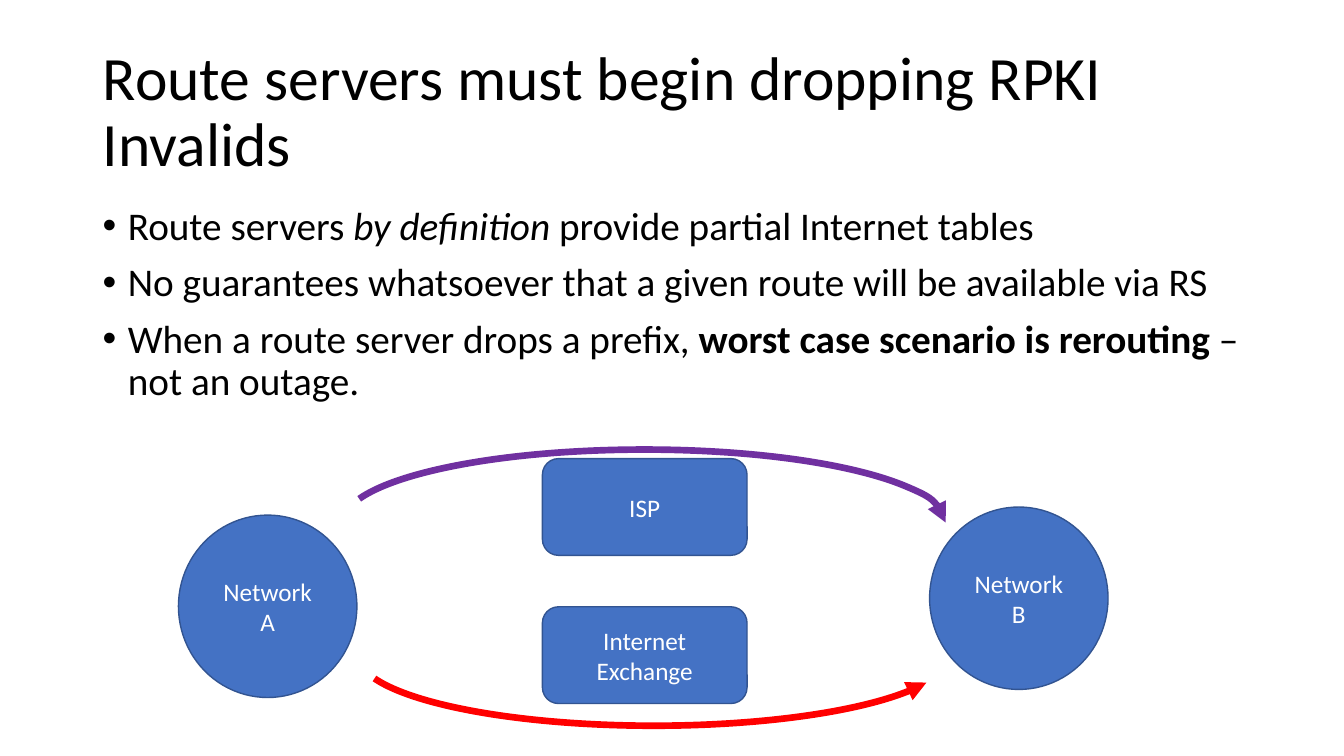
from lxml import etree
from pptx import Presentation, util as u
from pptx.dml.color import RGBColor
from pptx.enum import shapes, text
from pptx.oxml.ns import qn

COLOURS = {
    "ink": "000000",
    "white": "FFFFFF",
    "node": "4472C4",
    "node_edge": "325491",
    "transit": "7030A0",
    "peering": "FF0000",
}


def rgb(name):
    return RGBColor.from_string(COLOURS[name])


class RouteSlide:
    font = "Calibri"

    def __init__(self, deck):
        self.page = deck.slides.add_slide(deck.slide_layouts[5])

    def add_span(self, para, words, size, colour="ink", bold=False, italic=False):
        span = para.add_run()
        span.text = words
        span.font.name = self.font
        span.font.size = u.Pt(size)
        span.font.bold = bold
        span.font.italic = italic
        span.font.color.rgb = rgb(colour)

    def title(self, words, left, top, width, height):
        box = self.page.shapes.title
        box.left, box.top = u.Inches(left), u.Inches(top)
        box.width, box.height = u.Inches(width), u.Inches(height)
        frame = box.text_frame
        frame.auto_size = text.MSO_AUTO_SIZE.NONE
        frame.word_wrap = True
        frame.vertical_anchor = text.MSO_ANCHOR.MIDDLE
        para = frame.paragraphs[0]
        para.alignment = text.PP_ALIGN.LEFT
        para.line_spacing = 0.9
        self.add_span(para, words, 44)

    def bullets(self, items, left, top, width, height):
        """Each item is a list of (words, style) pairs."""
        box = self.page.shapes.add_textbox(*map(u.Inches, (left, top, width, height)))
        frame = box.text_frame
        frame.word_wrap = True
        for index, item in enumerate(items):
            para = frame.add_paragraph() if index else frame.paragraphs[0]
            props = para._p.get_or_add_pPr()
            props.set("marL", str(u.Inches(0.25)))
            props.set("indent", str(u.Inches(-0.25)))
            etree.SubElement(props, qn("a:buFont"), typeface="Arial")
            etree.SubElement(props, qn("a:buChar"), char="•")
            para.line_spacing = 0.9
            para.space_before = u.Pt(10 if index else 0)
            for words, style in item:
                self.add_span(para, words, 28, **style)

    def shape(self, kind, left, top, width, height, edge, weight):
        shape = self.page.shapes.add_shape(kind, *map(u.Inches, (left, top, width, height)))
        shape.shadow.inherit = False
        shape.line.color.rgb = rgb(edge)
        shape.line.width = u.Pt(weight)
        return shape

    def node(self, kind, label, left, top, width, height):
        node = self.shape(kind, left, top, width, height, "node_edge", 1)
        node.fill.solid()
        node.fill.fore_color.rgb = rgb("node")
        frame = node.text_frame
        frame.word_wrap = True
        frame.vertical_anchor = text.MSO_ANCHOR.MIDDLE
        para = frame.paragraphs[0]
        para.alignment = text.PP_ALIGN.CENTER
        self.add_span(para, label, 18, "white")

    def arc_arrow(self, left, top, width, height, start, end, colour, flipped=False):
        """Draw an arc between two angles, in degrees clockwise from the right."""
        arc = self.shape(shapes.MSO_SHAPE.ARC, left, top, width, height, colour, 4.75)
        arc.fill.background()
        for index, angle in enumerate((start, end)):
            arc.adjustments[index] = angle * 0.6
        if flipped:
            arc._element.spPr.find(qn("a:xfrm")).set("flipV", "1")
        line = arc.line._get_or_add_ln()
        etree.SubElement(line, qn("a:tailEnd"), type="triangle")


def main():
    deck = Presentation()
    deck.slide_width, deck.slide_height = u.Inches(13.33), u.Inches(7.5)
    slide = RouteSlide(deck)

    slide.title("Route servers must begin dropping RPKI Invalids", 0.92, 0.4, 12.12, 1.45)
    slide.bullets([
        [("Route servers ", {}), ("by definition ", {"italic": True}),
         ("provide partial Internet tables", {})],
        [("No guarantees whatsoever that a given route will be available via RS", {})],
        [("When a route server drops a prefix, ", {}),
         ("worst case scenario is rerouting", {"bold": True}),
         (" – not an outage.", {})],
    ], 0.92, 2, 11.5, 4.76)

    for label, left, top in (("Network A", 1.77, 5.11), ("Network B", 9.22, 5.03)):
        slide.node(shapes.MSO_SHAPE.OVAL, label, left, top, 1.77, 1.81)
    for label, top in (("ISP", 4.55), ("Internet Exchange", 6.02)):
        slide.node(shapes.MSO_SHAPE.ROUNDED_RECTANGLE, label, 5.38, top, 2.03, 0.96)

    slide.arc_arrow(3.4, 4.46, 5.98, 1.45, 184.77, 0, "transit")
    slide.arc_arrow(3.55, 5.8, 5.87, 1.4, 184.77, 354.25, "peering", flipped=True)

    deck.save("out.pptx")


if __name__ == "__main__":
    main()
